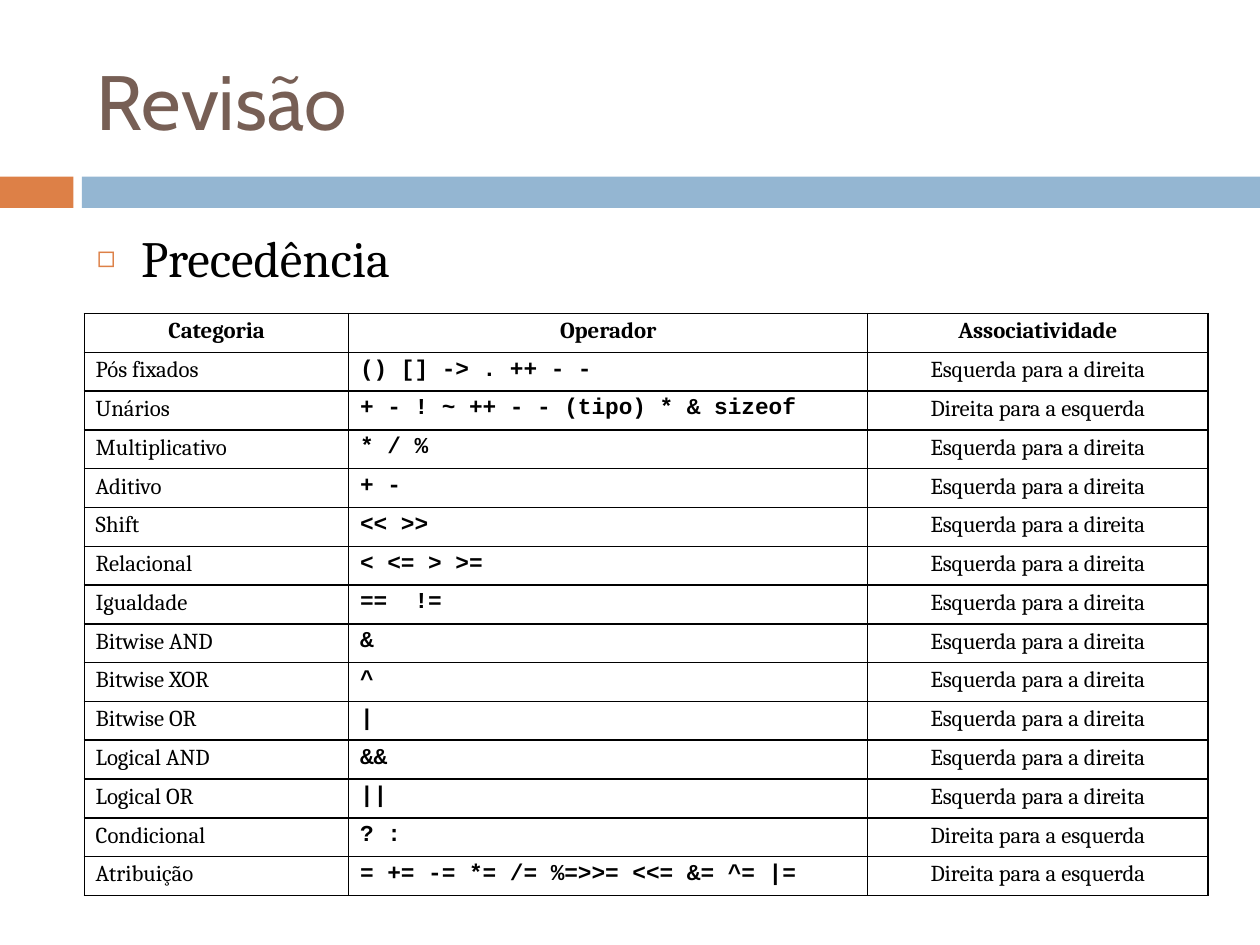
from dataclasses import dataclass

from lxml import etree
from pptx import Presentation
from pptx import util as u
from pptx.dml.color import RGBColor
from pptx.enum import shapes, text
from pptx.oxml.ns import qn

BLACK, ORANGE, BLUE, BROWN = "000000", "DD8047", "94B6D2", "775F55"
SERIF, MONO = "Cambria", "Courier New"
LEFT_TO_RIGHT = "Esquerda para a direita"
RIGHT_TO_LEFT = "Direita para a esquerda"


@dataclass
class Bar:
    left: float
    width: float
    color: str


@dataclass
class Precedence:
    category: str
    operators: str
    associativity: str = LEFT_TO_RIGHT


BARS = [Bar(0, 1.48, ORANGE), Bar(1.65, 23.75, BLUE)]
HEADINGS = Precedence("Categoria", "Operador", "Associatividade")
LEVELS = [
    Precedence("Pós fixados", "() [] -> . ++ - -"),
    Precedence("Unários", "+ - ! ~ ++ - - (tipo) * & sizeof", RIGHT_TO_LEFT),
    Precedence("Multiplicativo", "* / %"),
    Precedence("Aditivo", "+ -"),
    Precedence("Shift", "<< >>"),
    Precedence("Relacional", "< <= > >="),
    Precedence("Igualdade", "==  !="),
    Precedence("Bitwise AND", "&"),
    Precedence("Bitwise XOR", "^"),
    Precedence("Bitwise OR", "|"),
    Precedence("Logical AND", "&&"),
    Precedence("Logical OR", "||"),
    Precedence("Condicional", "? :", RIGHT_TO_LEFT),
    Precedence("Atribuição", "= += -= *= /= %=>>= <<= &= ^= |=", RIGHT_TO_LEFT),
]
COLUMN_WIDTHS = [5.33, 10.46, 6.86]
TABLE_HEIGHT = 11.73


def rgb(color: str) -> RGBColor:
    return RGBColor.from_string(color)


def place(shape, left: float, top: float, width: float, height: float) -> None:
    shape.left, shape.top = u.Cm(left), u.Cm(top)
    shape.width, shape.height = u.Cm(width), u.Cm(height)


def format_runs(paragraph, font_name: str, size: float, color: str, bold: bool = False) -> None:
    for run in paragraph.runs:
        run.font.name = font_name
        run.font.size = u.Pt(size)
        run.font.color.rgb = rgb(color)
        run.font.bold = bold


def add_bar(slide, bar: Bar) -> None:
    shape = slide.shapes.add_shape(
        shapes.MSO_SHAPE.RECTANGLE, u.Cm(bar.left), u.Cm(3.56), u.Cm(bar.width), u.Cm(0.63))
    shape.shadow.inherit = False
    shape.fill.solid()
    shape.fill.fore_color.rgb = rgb(bar.color)
    shape.line.fill.background()


def add_bullet(paragraph, symbol: str, color: str, percent: int) -> None:
    properties = paragraph._p.get_or_add_pPr()
    indent = u.Cm(0.89)
    properties.set("marL", str(indent))
    properties.set("indent", str(-indent))
    bullet_color = etree.SubElement(properties, qn("a:buClr"))
    etree.SubElement(bullet_color, qn("a:srgbClr"), val=color)
    etree.SubElement(properties, qn("a:buSzPct"), val=str(percent * 1000))
    etree.SubElement(properties, qn("a:buChar"), char=symbol)


def add_borders(cell, color: str) -> None:
    properties = cell._tc.get_or_add_tcPr()
    for position, side in enumerate(("a:lnL", "a:lnR", "a:lnT", "a:lnB")):
        line = etree.Element(qn(side), w=str(u.Pt(1)))
        fill = etree.SubElement(line, qn("a:solidFill"))
        etree.SubElement(fill, qn("a:srgbClr"), val=color)
        properties.insert(position, line)


def fill_cell(cell, content: str, font_name: str, bold: bool, centered: bool) -> None:
    cell.fill.background()
    cell.margin_left = cell.margin_right = u.Cm(0.23)
    cell.margin_top = cell.margin_bottom = u.Cm(0.1)
    cell.text_frame.text = content
    paragraph = cell.text_frame.paragraphs[0]
    paragraph.alignment = text.PP_ALIGN.CENTER if centered else text.PP_ALIGN.LEFT
    format_runs(paragraph, font_name, 13, BLACK, bold)
    add_borders(cell, BLACK)


def add_precedence_table(slide) -> None:
    rows = [HEADINGS, *LEVELS]
    table = slide.shapes.add_table(
        len(rows), len(COLUMN_WIDTHS), u.Cm(1.7), u.Cm(6.32),
        u.Cm(sum(COLUMN_WIDTHS)), u.Cm(TABLE_HEIGHT)).table
    table.horz_banding = False
    for column, width in zip(table.columns, COLUMN_WIDTHS):
        column.width = u.Cm(width)
    for index, level in enumerate(rows):
        table.rows[index].height = u.Cm(TABLE_HEIGHT / len(rows))
        heading = index == 0
        fill_cell(table.cell(index, 0), level.category, SERIF, heading, heading)
        fill_cell(table.cell(index, 1), level.operators, SERIF if heading else MONO, True, heading)
        fill_cell(table.cell(index, 2), level.associativity, SERIF, heading, True)


def main() -> None:
    presentation = Presentation()
    presentation.slide_width, presentation.slide_height = u.Cm(25.4), u.Cm(19.05)
    slide = presentation.slides.add_slide(presentation.slide_layouts[1])

    # Bars below the title
    for bar in BARS:
        add_bar(slide, bar)

    # Title
    title = slide.shapes.title
    place(title, 1.7, 0.64, 22.65, 2.74)
    title.text_frame.text = "Revisão"
    title.text_frame.vertical_anchor = text.MSO_ANCHOR.MIDDLE
    paragraph = title.text_frame.paragraphs[0]
    paragraph.alignment = text.PP_ALIGN.LEFT
    format_runs(paragraph, "Cabin", 44, BROWN)

    # Topic
    body = slide.placeholders[1]
    place(body, 1.7, 4.45, 22.65, 13.28)
    body.text_frame.text = "Precedência"
    paragraph = body.text_frame.paragraphs[0]
    paragraph.space_before = u.Pt(7)
    format_runs(paragraph, SERIF, 29, BLACK)
    add_bullet(paragraph, "◻", ORANGE, 60)

    # Operator precedence
    add_precedence_table(slide)

    presentation.save("out.pptx")


if __name__ == "__main__":
    main()
